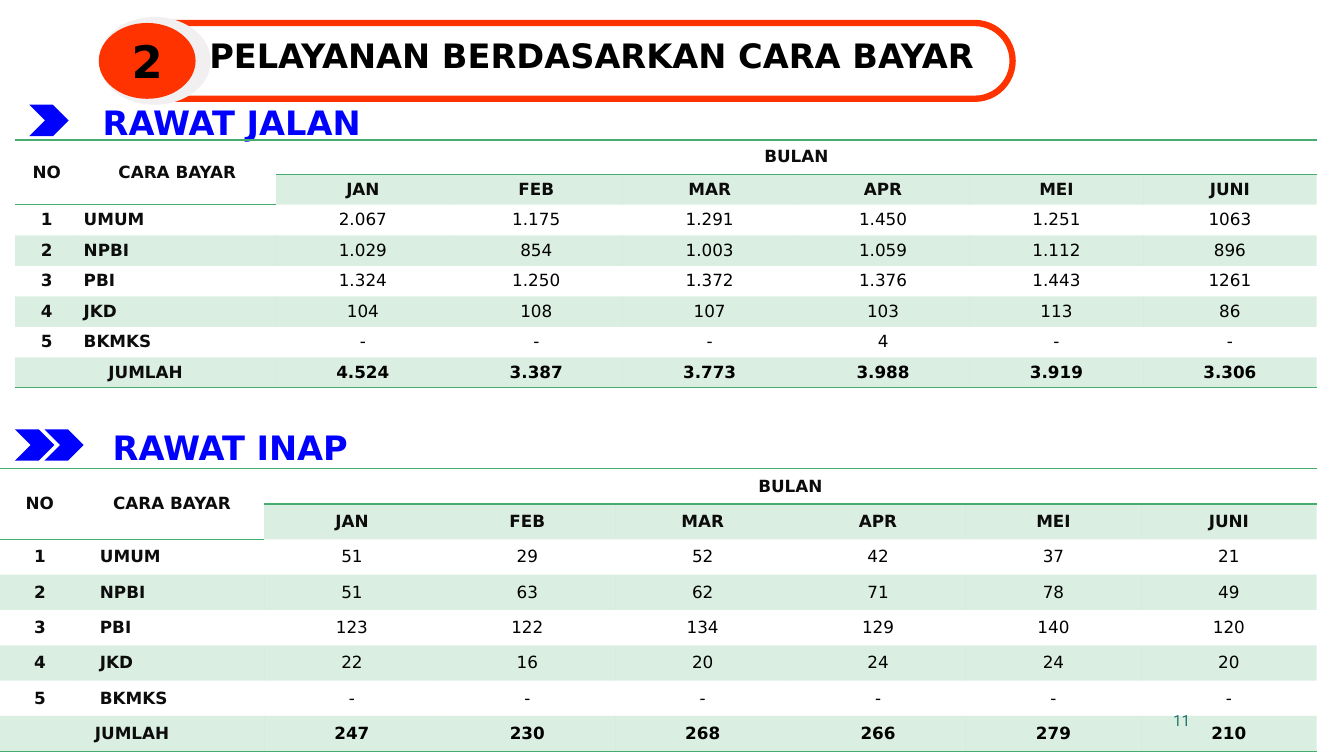
from lxml import etree
from pptx import Presentation
from pptx.dml.color import RGBColor
from pptx.enum.shapes import MSO_SHAPE
from pptx.enum.text import MSO_ANCHOR, MSO_AUTO_SIZE, PP_ALIGN
from pptx.oxml.ns import qn
from pptx.util import Cm, Pt

PILL, OVAL, CHEVRON = MSO_SHAPE.ROUNDED_RECTANGLE, MSO_SHAPE.OVAL, MSO_SHAPE.CHEVRON
LEFT, CENTER, RIGHT = PP_ALIGN.LEFT, PP_ALIGN.CENTER, PP_ALIGN.RIGHT
TOP, MIDDLE, BOTTOM = MSO_ANCHOR.TOP, MSO_ANCHOR.MIDDLE, MSO_ANCHOR.BOTTOM
FIT_TEXT = MSO_AUTO_SIZE.SHAPE_TO_FIT_TEXT

BLACK = RGBColor(0x00, 0x00, 0x00)
LABEL_BLACK = RGBColor(0x0C, 0x0C, 0x0C)
ORANGE = RGBColor(0xFF, 0x33, 0x00)
PALE_GREY = RGBColor(0xF1, 0xEF, 0xF0)
BLUE = RGBColor(0x00, 0x00, 0xFF)
GREEN = RGBColor(0x46, 0xAC, 0x6F)
TEAL = RGBColor(0x1F, 0x69, 0x6F)

FONT = "DejaVu Sans"
NUMBER_FONT = "Roboto"
NO_STYLE = "{2D5ABB26-0587-4C30-8999-92F81FD0307C}"

# Content
TITLE = "PELAYANAN BERDASARKAN CARA BAYAR"
SECTION_NUMBER = "2"
PAGE_NUMBER = "11"
HEADER = ["NO", "CARA BAYAR", "BULAN", "", "", "", "", ""]
MONTHS = ["", "", "JAN", "FEB", "MAR", "APR", "MEI", "JUNI"]
OUTPATIENT = [
    ["1", "UMUM", "2.067", "1.175", "1.291", "1.450", "1.251", "1063"],
    ["2", "NPBI", "1.029", "854", "1.003", "1.059", "1.112", "896"],
    ["3", "PBI", "1.324", "1.250", "1.372", "1.376", "1.443", "1261"],
    ["4", "JKD", "104", "108", "107", "103", "113", "86"],
    ["5", "BKMKS", "-", "-", "-", "4", "-", "-"],
    ["JUMLAH", "", "4.524", "3.387", "3.773", "3.988", "3.919", "3.306"],
]
INPATIENT = [
    ["1", "UMUM", "51", "29", "52", "42", "37", "21"],
    ["2", "NPBI", "51", "63", "62", "71", "78", "49"],
    ["3", "PBI", "123", "122", "134", "129", "140", "120"],
    ["4", "JKD", "22", "16", "20", "24", "24", "20"],
    ["5", "BKMKS", "-", "-", "-", "-", "-", "-"],
    ["JUMLAH", "", "247", "230", "268", "266", "279", "210"],
]

# Section layout in cm; insets are (horizontal, vertical)
SECTIONS = [
    dict(heading="RAWAT JALAN", heading_box=(2.13, 2.44, 7.42, 1.27),
         chevrons=[(0.74, 2.64)], corner=(0.38, 3.53), records=OUTPATIENT,
         columns=[1.6, 4.98] + [4.37] * 6, rows=[0.86] + [0.76] * 7,
         label_inset=(0.13, 0.13), value_inset=(0.13, 0.13)),
    dict(heading="RAWAT INAP", heading_box=(2.39, 10.64, 6.83, 1.27),
         chevrons=[(0.38, 10.82), (1.12, 10.82)], corner=(0, 11.81), records=INPATIENT,
         columns=[2.01, 4.65] + [4.42] * 6, rows=[0.89] * 8,
         label_inset=(0.51, 0.18), value_inset=(0, 0)),
]
CHEVRON_SIZE = (0.99, 0.79)


def write(frame, text, size, color, bold=True, align=CENTER, anchor=MIDDLE, font=FONT):
    frame.vertical_anchor = anchor
    paragraph = frame.paragraphs[0]
    paragraph.text = text
    paragraph.alignment = align
    paragraph.font.name = font
    paragraph.font.size = Pt(size)
    paragraph.font.bold = bold
    paragraph.font.color.rgb = color
    return paragraph


def add_text(slide, box, text, size, color, wrap=True, **style):
    frame = slide.shapes.add_textbox(*map(Cm, box)).text_frame
    frame.word_wrap = wrap
    write(frame, text, size, color, **style)
    return frame


def add_plain_shape(shapes, kind, box, color):
    shape = shapes.add_shape(kind, *map(Cm, box))
    shape.shadow.inherit = False
    shape.fill.solid()
    shape.fill.fore_color.rgb = color
    shape.line.fill.background()
    return shape


def add_border(cell, side):
    line = etree.Element(qn("a:" + side), w=str(Pt(1)))
    fill = etree.SubElement(line, qn("a:solidFill"))
    etree.SubElement(fill, qn("a:srgbClr"), val=str(GREEN))
    cell._tc.get_or_add_tcPr().insert(0, line)


def shade(cell):
    cell.fill.solid()
    cell.fill.fore_color.rgb = GREEN
    color = cell._tc.tcPr.find(".//" + qn("a:srgbClr"))
    etree.SubElement(color, qn("a:alpha"), val="20000")


def add_payment_table(slide, section):
    cells = [HEADER, MONTHS] + section["records"]
    columns, rows = section["columns"], section["rows"]
    size = (sum(columns), sum(rows))
    table = slide.shapes.add_table(len(rows), len(columns),
                                   *map(Cm, section["corner"] + size)).table
    table._tbl.tblPr.find(qn("a:tableStyleId")).text = NO_STYLE
    table.first_row = table.horz_banding = False
    for column, width in zip(table.columns, columns):
        column.width = Cm(width)
    for row, height in zip(table.rows, rows):
        row.height = Cm(height)

    last = len(rows) - 1
    for r, texts in enumerate(cells):
        for c, text in enumerate(texts):
            cell = table.cell(r, c)
            is_value = r > 1 and c > 1
            across, down = section["value_inset" if is_value else "label_inset"]
            cell.margin_left = cell.margin_right = Cm(across)
            cell.margin_top = cell.margin_bottom = Cm(down)
            cell.vertical_anchor = MIDDLE
            write(cell.text_frame, text, 12, BLACK if is_value else LABEL_BLACK,
                  bold=not is_value or r == last,
                  align=LEFT if c == 1 and 1 < r < last else CENTER)
            # Every second row is tinted, except under the two-row headers
            if r % 2 and (r > 1 or c > 1):
                shade(cell)
            else:
                cell.fill.background()
            if r in (0, last) or (r == 1 and c < 2):
                add_border(cell, "lnB")
            if r == 0:
                add_border(cell, "lnT")

    for first, end in [((0, 0), (1, 0)), ((0, 1), (1, 1)), ((0, 2), (0, 7)),
                       ((last, 0), (last, 1))]:
        table.cell(*first).merge(table.cell(*end))


def main():
    deck = Presentation()
    deck.slide_width, deck.slide_height = Cm(33.87), Cm(19.05)
    slide = deck.slides.add_slide(deck.slide_layouts[6])

    # Page number
    add_text(slide, (22.35, 17.65, 7.9, 1.02), PAGE_NUMBER, 11, TEAL,
             bold=False, align=RIGHT, font=NUMBER_FONT)

    # Title banner
    banner = slide.shapes.add_group_shape().shapes
    pill = add_plain_shape(banner, PILL, (2.79, 0.58, 22.73, 1.91), ORANGE)
    pill.adjustments[0] = 0.5
    pill.fill.background()
    pill.line.color.rgb = ORANGE
    pill.line.width = Pt(4.5)
    add_plain_shape(banner, OVAL, (2.49, 0.43, 2.82, 2.21), PALE_GREY)
    badge = add_plain_shape(banner, OVAL, (2.49, 0.58, 2.44, 1.91), ORANGE)
    write(badge.text_frame, SECTION_NUMBER, 32, BLACK)
    title = add_text(slide, (3.99, 0.13, 21.84, 1.91), TITLE, 24, BLACK, anchor=BOTTOM)
    title.paragraphs[0].line_spacing = 0.9

    # Sections
    for section in SECTIONS:
        for corner in section["chevrons"]:
            add_plain_shape(slide.shapes, CHEVRON, corner + CHEVRON_SIZE, BLUE)
        heading = add_text(slide, section["heading_box"], section["heading"], 24, BLUE,
                           wrap=False, anchor=TOP)
        heading.auto_size = FIT_TEXT
        add_payment_table(slide, section)

    deck.save("out.pptx")


if __name__ == "__main__":
    main()
